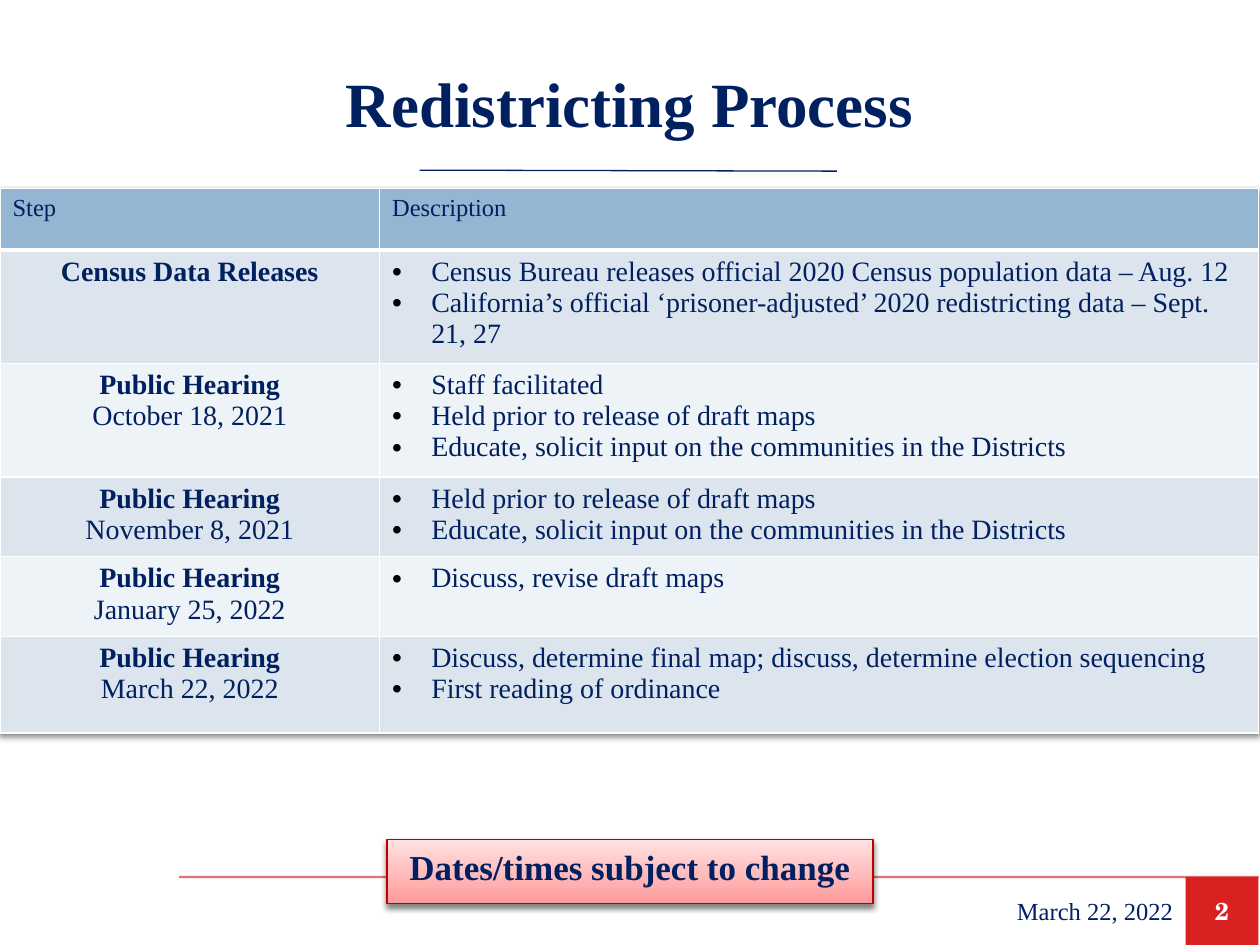
import pptx
import pptx.dml.color
import pptx.enum.shapes
import pptx.enum.text
import pptx.oxml
import pptx.oxml.ns
import pptx.util
from dataclasses import dataclass

Cm, Pt = pptx.util.Cm, pptx.util.Pt
ALIGN = pptx.enum.text.PP_ALIGN
ANCHOR = pptx.enum.text.MSO_ANCHOR
RECT = pptx.enum.shapes.MSO_SHAPE.RECTANGLE
STRAIGHT = pptx.enum.shapes.MSO_CONNECTOR.STRAIGHT
NS = pptx.oxml.ns.nsdecls("a")


@dataclass(frozen=True)
class Theme:
    font: str = "Times New Roman"
    number_font: str = "TeX Gyre Schola"
    navy: str = "002060"
    white: str = "FFFFFF"
    red: str = "D92121"
    rule: str = "C80000"
    edge: str = "C00000"
    blush: tuple = ("FFE2E2", "FF9A9A")
    header: str = "94B6D2"
    bands: tuple = ("DCE5EE", "EEF3F7")
    title: int = 36
    callout: int = 20
    body: int = 16
    small: int = 14


T = Theme()
HEADER = ("Step", "Description")
STEPS = [
    (2.13, ["Census Data Releases"],
     ["Census Bureau releases official 2020 Census population data – Aug. 12",
      "California’s official ‘prisoner-adjusted’ 2020 redistricting data – Sept. 21, 27"]),
    (2.13, ["Public Hearing", "October 18, 2021"],
     ["Staff facilitated", "Held prior to release of draft maps",
      "Educate, solicit input on the communities in the Districts"]),
    (1.54, ["Public Hearing", "November 8, 2021"],
     ["Held prior to release of draft maps",
      "Educate, solicit input on the communities in the Districts"]),
    (1.52, ["Public Hearing", "January 25, 2022"], ["Discuss, revise draft maps"]),
    (1.95, ["Public Hearing", "March 22, 2022"],
     ["Discuss, determine final map; discuss, determine election sequencing",
      "First reading of ordinance"]),
]


def rgb(value):
    return pptx.dml.color.RGBColor.from_string(value)


def write(p, text, align=ALIGN.LEFT, color=T.navy, **fmt):
    p.alignment = align
    r = p.add_run()
    r.text = text
    for name, value in {"name": T.font, "size": Pt(T.body), "bold": False, **fmt}.items():
        setattr(r.font, name, value)
    r.font.color.rgb = rgb(color)


def add_text(s, box, text, anchor=ANCHOR.MIDDLE, **fmt):
    sp = s.shapes.add_textbox(*map(Cm, box))
    tf = sp.text_frame
    tf.word_wrap = True
    tf.vertical_anchor = anchor
    write(tf.paragraphs[0], text, **fmt)
    return sp


def add_line(s, start, end, color, width, alpha=100):
    c = s.shapes.add_connector(STRAIGHT, *map(Cm, start + end))
    c.line.color.rgb = rgb(color)
    c.line.width = Pt(width)
    if alpha < 100:
        clr = c.line.fill._xPr.find(".//" + pptx.oxml.ns.qn("a:srgbClr"))
        clr.append(pptx.oxml.parse_xml(f'<a:alpha {NS} val="{alpha * 1000}"/>'))
    c._element.spPr.append(pptx.oxml.parse_xml(f"<a:effectLst {NS}/>"))


def drop_shadow():
    return pptx.oxml.parse_xml(
        f'<a:effectLst {NS}><a:outerShdw blurRad="40000" dist="23000" dir="5400000" '
        'rotWithShape="0"><a:srgbClr val="000000"><a:alpha val="50000"/></a:srgbClr>'
        "</a:outerShdw></a:effectLst>")


def add_bullet(p):
    pPr = p._p.get_or_add_pPr()
    pPr.set("marL", str(Cm(0.79)))
    pPr.set("indent", str(-Cm(0.79)))
    for xml in (f'<a:buClr {NS}><a:srgbClr val="000000"/></a:buClr>',
                f'<a:buFont {NS} typeface="Arial"/>', f'<a:buChar {NS} char="•"/>'):
        pPr.append(pptx.oxml.parse_xml(xml))


def style_cell(cell, color, bottom=1):
    cell.fill.solid()
    cell.fill.fore_color.rgb = rgb(color)
    tcPr = cell._tc.get_or_add_tcPr()
    for i, (side, width) in enumerate(zip("LRTB", (1, 1, 1, bottom))):
        tcPr.insert(i, pptx.oxml.parse_xml(
            f'<a:ln{side} {NS} w="{Pt(width)}"><a:solidFill><a:srgbClr val="{T.white}"/>'
            f"</a:solidFill></a:ln{side}>"))


def paragraphs(cell, lines):
    """Yield one paragraph of the cell with each line."""
    tf = cell.text_frame
    for i, line in enumerate(lines):
        yield (tf.add_paragraph() if i else tf.paragraphs[0]), line


def add_heading(s, box):
    x, y, w, h = box
    add_text(s, box, "Redistricting Process", align=ALIGN.CENTER, size=Pt(T.title), bold=True)
    add_line(s, (x + 7.52, y + h), (x + 15.93, y + h + 0.02), T.navy, 0.75)


def add_steps(s, box):
    table = s.shapes.add_table(len(STEPS) + 1, 2, *map(Cm, box)).table
    table._tbl.tblPr.insert(0, drop_shadow())
    step_width = 7.65
    for col, width in zip(table.columns, (step_width, box[2] - step_width)):
        col.width = Cm(width)
    table.rows[0].height = Cm(1.24)
    for cell, text in zip(table.rows[0].cells, HEADER):
        style_cell(cell, T.header, bottom=3)
        write(cell.text_frame.paragraphs[0], text, size=Pt(T.small))
    for i, (height, step, points) in enumerate(STEPS):
        row = table.rows[i + 1]
        row.height = Cm(height)
        for cell in row.cells:
            style_cell(cell, T.bands[i % 2])
        for p, line in paragraphs(row.cells[0], step):
            write(p, line, ALIGN.CENTER, bold=line == step[0])
        for p, line in paragraphs(row.cells[1], points):
            add_bullet(p)
            write(p, line)


def add_footer(s, box):
    x, y, w, h = box
    number, date = 1.47, 4.42
    add_line(s, (x, y), (x + w, y), T.rule, 1.25, alpha=55)
    sp = add_text(s, (x + w - number, y, number, h), "2", align=ALIGN.CENTER, color=T.white,
                  name=T.number_font, size=Pt(T.small), bold=True)
    sp.fill.solid()
    sp.fill.fore_color.rgb = rgb(T.red)
    add_text(s, (x + w - number - date, y, date, h), "March 22, 2022",
             align=ALIGN.RIGHT, size=Pt(T.small))


def add_callout(s, box):
    sp = add_text(s, box, "Dates/times subject to change", ANCHOR.TOP,
                  align=ALIGN.CENTER, size=Pt(T.callout), bold=True)
    sp.fill.gradient()
    sp.fill.gradient_angle = 270
    for stop, color, position in zip(sp.fill.gradient_stops, T.blush, (0, 1)):
        stop.color.rgb = rgb(color)
        stop.position = position
    sp.line.color.rgb = rgb(T.edge)
    sp.line.width = Pt(0.75)
    sp._element.spPr.append(drop_shadow())


def main():
    prs = pptx.Presentation()
    prs.slide_width, prs.slide_height = Cm(25.4), Cm(19.05)
    s = prs.slides.add_slide(prs.slide_layouts[6])
    add_footer(s, (3.61, 17.68, 21.76, 1.37))
    add_heading(s, (0.94, 0.69, 23.5, 2.74))
    add_steps(s, (0, 3.8, 25.37, 10.51))
    add_callout(s, (7.8, 16.92, 9.8, 1.3))
    prs.save("out.pptx")


if __name__ == "__main__":
    main()
